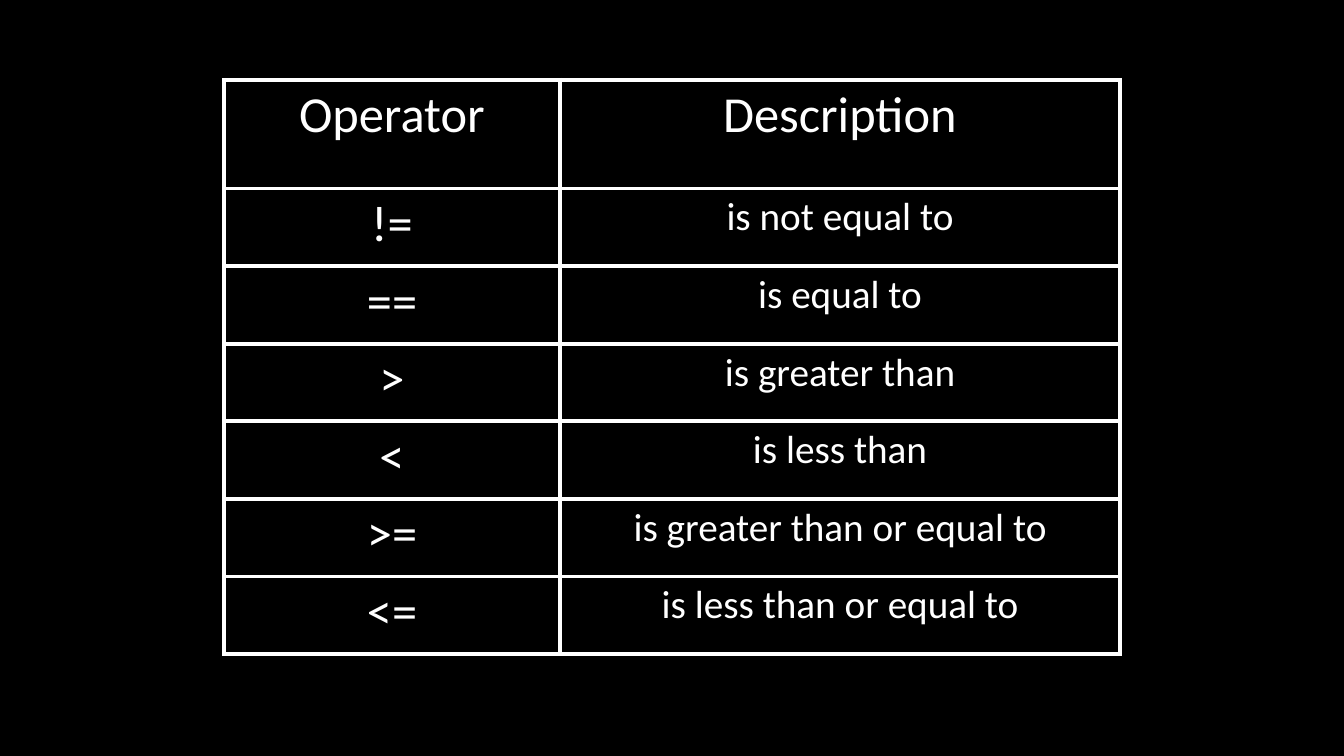
from lxml import etree
from pptx import Presentation
from pptx.dml.color import RGBColor
from pptx.enum.text import PP_ALIGN
from pptx.oxml.ns import qn
from pptx.util import Inches, Pt

CENTER = PP_ALIGN.CENTER
COLORS = {"background": "000000", "text": "FFFFFF", "border": "FFFFFF"}
FONT = "Calibri"
BORDER_WIDTH = Pt(3)
LARGE, SMALL = Pt(36), Pt(28)
SLIDE_W, SLIDE_H = 13.33, 7.5
COLUMN_SHARES = (3 / 8, 5 / 8)
HEADER_H, ROW_H = 1.08, 0.77

OPERATORS = [
    ("Operator", "Description"),
    ("!=", "is not equal to"),
    ("==", "is equal to"),
    (">", "is greater than"),
    ("<", "is less than"),
    (">=", "is greater than or equal to"),
    ("<=", "is less than or equal to"),
]


def paint(fill, color):
    fill.solid()
    fill.fore_color.rgb = RGBColor.from_string(COLORS[color])


def add_borders(cell):
    tc_pr = cell._tc.get_or_add_tcPr()
    for i, side in enumerate(("lnL", "lnR", "lnT", "lnB")):
        ln = etree.Element(qn(f"a:{side}"), w=str(BORDER_WIDTH))
        solid = etree.SubElement(ln, qn("a:solidFill"))
        etree.SubElement(solid, qn("a:srgbClr"), val=COLORS["border"])
        tc_pr.insert(i, ln)


def fill_cell(cell, text, size):
    paint(cell.fill, "background")
    add_borders(cell)
    cell.text_frame.text = text
    p = cell.text_frame.paragraphs[0]
    p.alignment = CENTER
    font = p.runs[0].font
    font.name, font.size, font.bold = FONT, size, False
    paint(font.fill, "text")


def add_operator_table(slide, left, top, width):
    heights = [HEADER_H] + [ROW_H] * (len(OPERATORS) - 1)
    frame = slide.shapes.add_table(
        len(OPERATORS), len(COLUMN_SHARES),
        Inches(left), Inches(top), Inches(width), Inches(sum(heights)))
    table = frame.table
    table.first_row = table.horz_banding = False
    for column, share in zip(table.columns, COLUMN_SHARES):
        column.width = Inches(width * share)
    for i, (row, height, texts) in enumerate(zip(table.rows, heights, OPERATORS)):
        row.height = Inches(height)
        sizes = (LARGE, LARGE if i == 0 else SMALL)
        for cell, text, size in zip(row.cells, texts, sizes):
            fill_cell(cell, text, size)


def main():
    prs = Presentation()
    prs.slide_width, prs.slide_height = Inches(SLIDE_W), Inches(SLIDE_H)
    slide = prs.slides.add_slide(prs.slide_layouts[6])
    paint(slide.background.fill, "background")
    add_operator_table(slide, SLIDE_W / 6, 0.79, SLIDE_W * 2 / 3)
    prs.save("out.pptx")


if __name__ == "__main__":
    main()
